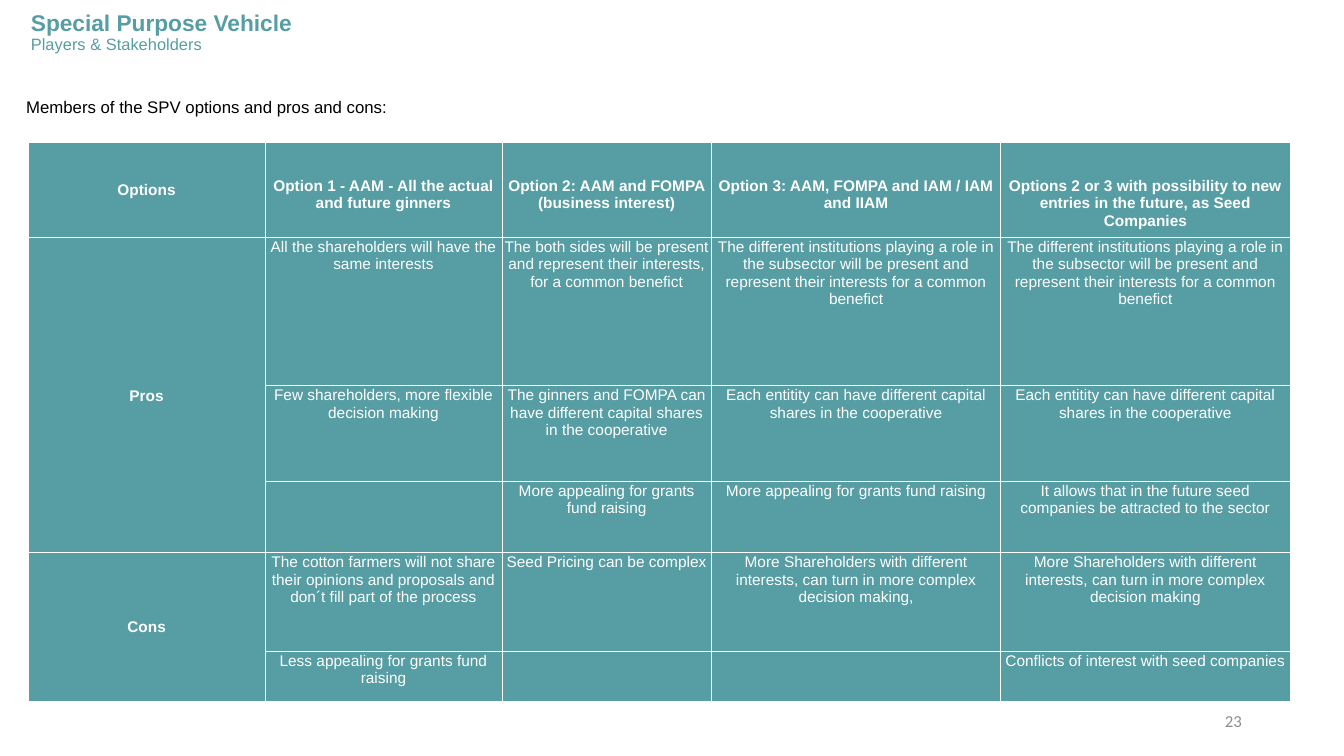
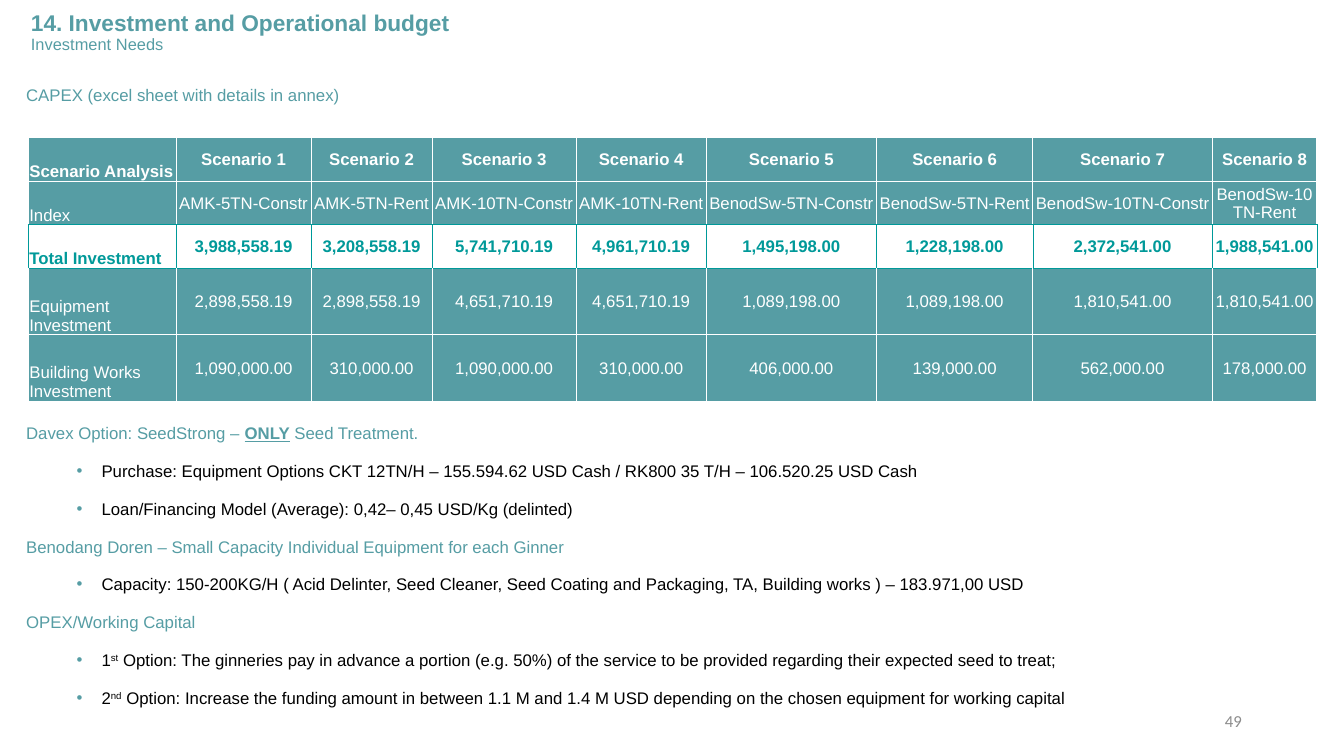
from dataclasses import dataclass

from lxml import etree
from pptx import Presentation
from pptx.dml.color import RGBColor
from pptx.enum.text import MSO_ANCHOR, PP_ALIGN
from pptx.oxml.ns import qn
from pptx.util import Cm, Pt

LEFT, CENTER, RIGHT = PP_ALIGN.LEFT, PP_ALIGN.CENTER, PP_ALIGN.RIGHT
TOP, MIDDLE, BOTTOM = MSO_ANCHOR.TOP, MSO_ANCHOR.MIDDLE, MSO_ANCHOR.BOTTOM


@dataclass(frozen=True)
class Theme:
    teal: str = "569DA4"
    accent: str = "009999"
    white: str = "FFFFFF"
    black: str = "000000"
    grey: str = "8C8C8C"
    font: str = "Arial"
    number_font: str = "Calibri"
    title: float = 16.2
    subtitle: float = 11.7
    body: float = 12
    small: float = 11


THEME = Theme()

# Content: members of the vehicle
INSTITUTIONS = ("The different institutions playing a role in the subsector will be present "
                "and represent their interests for a common benefict")
SHARES = "Each entitity can have different capital shares in the cooperative"
GRANTS = "More appealing for grants fund raising"
COMPLEX = ("More Shareholders with different interests, "
           "can turn in more complex decision making")

OPTION_ROWS = [
    ["Options", "Option 1 - AAM - All the actual and future ginners",
     "Option 2: AAM and FOMPA (business interest)",
     "Option 3: AAM, FOMPA and IAM / IAM and IIAM",
     "Options 2 or 3 with possibility to new entries in the future, as Seed Companies"],
    ["Pros", "All the shareholders will have the same interests",
     "The both sides will be present and represent their interests, for a common benefict",
     INSTITUTIONS, INSTITUTIONS],
    ["", "Few shareholders, more flexible decision making",
     "The ginners and FOMPA can have different capital shares in the cooperative",
     SHARES, SHARES],
    ["", "", GRANTS, GRANTS,
     "It allows that in the future seed companies be attracted to the sector"],
    ["Cons", "The cotton farmers will not share their opinions and proposals "
     "and don´t fill part of the process",
     "Seed Pricing can be complex", COMPLEX + ",", COMPLEX],
    ["", "Less appealing for grants fund raising", "", "",
     "Conflicts of interest with seed companies"],
]
OPTION_WIDTHS = [5.97, 5.97, 5.28, 7.29, 7.29]
OPTION_HEIGHTS = [2.41, 3.73, 2.41, 1.8, 2.49, 1.24]
OPTION_GROUPS = [(1, 3), (4, 5)]  # first and last row of each merged label

# Content: investment scenarios
SCENARIO_ROWS = [
    ["Scenario Analysis"] + [f"Scenario {number}" for number in range(1, 9)],
    ["Index"] + [f"{supplier}-{capacity}TN-{site}" for supplier in ("AMK", "BenodSw")
                 for capacity in (5, 10) for site in ("Constr", "Rent")],
    ["Total Investment", "3,988,558.19", "3,208,558.19", "5,741,710.19", "4,961,710.19",
     "1,495,198.00", "1,228,198.00", "2,372,541.00", "1,988,541.00"],
    ["Equipment Investment", "2,898,558.19", "2,898,558.19", "4,651,710.19", "4,651,710.19",
     "1,089,198.00", "1,089,198.00", "1,810,541.00", "1,810,541.00"],
    ["Building Works Investment", "1,090,000.00", "310,000.00", "1,090,000.00", "310,000.00",
     "406,000.00", "139,000.00", "562,000.00", "178,000.00"],
]
SCENARIO_WIDTHS = [3.73, 3.4, 3.05, 3.63, 3.28, 4.29, 3.94, 4.52, 2.64]
SCENARIO_HEIGHTS = [1.12, 1.09, 1.09, 1.68, 1.68]
TOTAL_ROW = 2

# Each note: is it a bullet, then its runs as (text, emphasis)
NOTES = [
    (False, [("Davex Option: SeedStrong – ", ""), ("ONLY", "strong"),
             (" Seed Treatment.", "")]),
    (True, [("Purchase: Equipment Options CKT 12TN/H – 155.594.62 USD Cash / "
             "RK800 35 T/H – 106.520.25 USD Cash", "")]),
    (True, [("Loan/Financing Model (Average): 0,42– 0,45 USD/Kg (delinted)", "")]),
    (False, [("Benodang Doren – Small Capacity Individual Equipment for each Ginner", "")]),
    (True, [("Capacity: 150-200KG/H ( Acid Delinter, Seed Cleaner, Seed Coating and "
             "Packaging, TA, Building works ) – 183.971,00 USD", "")]),
    (False, [("OPEX/Working Capital", "")]),
    (True, [("1", ""), ("st", "super"),
            (" Option: The ginneries pay in advance a portion (e.g. 50%) of the service "
             "to be provided regarding their expected seed to treat;", "")]),
    (True, [("2", ""), ("nd", "super"),
            (" Option: Increase the funding amount in between 1.1 M and 1.4 M USD "
             "depending on the chosen equipment for working capital", "")]),
]


# Text helpers
def add_span(para, text, size, color, bold=False, font=THEME.font):
    span = para.add_run()
    span.text = text
    span.font.name = font
    span.font.size = Pt(size)
    span.font.bold = bold
    span.font.color.rgb = RGBColor.from_string(color)
    return span


def add_box(page, left, top, width, height, anchor=TOP):
    box = page.shapes.add_textbox(Cm(left), Cm(top), Cm(width), Cm(height))
    box.text_frame.word_wrap = True
    box.text_frame.vertical_anchor = anchor
    return box.text_frame


def add_bullet(para):
    properties = para._p.get_or_add_pPr()
    properties.set("marL", str(Cm(1.9)))
    properties.set("indent", str(-Cm(0.63)))
    color = etree.SubElement(properties, qn("a:buClr"))
    etree.SubElement(color, qn("a:srgbClr"), val=THEME.teal)
    etree.SubElement(properties, qn("a:buFont"), typeface=THEME.font)
    etree.SubElement(properties, qn("a:buChar"), char="•")


# Shared frame of every page
def add_page(deck, title, subtitle, number):
    page = deck.slides.add_slide(deck.slide_layouts[6])
    para = add_box(page, 0.53, 0.2, 20.95, 1.25, MIDDLE).paragraphs[0]
    para.line_spacing = 0.9
    add_span(para, title, THEME.title, THEME.teal, bold=True)
    para.add_line_break()
    add_span(para, subtitle, THEME.subtitle, THEME.teal)

    para = add_box(page, 23.93, 17.65, 7.62, 1.02, MIDDLE).paragraphs[0]
    para.alignment = RIGHT
    add_span(para, number, THEME.body, THEME.grey, font=THEME.number_font)
    return page


def add_intro(page, text, color, line_spacing):
    para = add_box(page, 0.41, 2.06, 33.1, 1.2).paragraphs[0]
    para.line_spacing = line_spacing
    add_span(para, text, THEME.body, color)


# Table helpers
def add_grid(page, top, widths, heights):
    table = page.shapes.add_table(len(heights), len(widths), Cm(0.71), Cm(top),
                                  Cm(sum(widths)), Cm(sum(heights))).table
    table.first_row = table.horz_banding = False
    for column, width in zip(table.columns, widths):
        column.width = Cm(width)
    for row, height in zip(table.rows, heights):
        row.height = Cm(height)
    return table


def set_borders(cell, line, top=None, bottom=None):
    properties = cell._tc.get_or_add_tcPr()
    sides = {"L": line, "R": line, "T": top or line, "B": bottom or line}
    for side, (color, width) in sides.items():
        edge = etree.SubElement(properties, qn(f"a:ln{side}"), w=str(Pt(width)))
        fill = etree.SubElement(edge, qn("a:solidFill"))
        etree.SubElement(fill, qn("a:srgbClr"), val=color)


def fill_cell(cell, text, size, color, bold, align, anchor, margin_top=0.03):
    cell.margin_left = cell.margin_right = Cm(0.03)
    cell.margin_top, cell.margin_bottom = Cm(margin_top), 0
    cell.vertical_anchor = anchor
    para = cell.text_frame.paragraphs[0]
    para.alignment = align
    para.font.size = Pt(size)
    if text:
        add_span(para, text, size, color, bold)


def paint(cell, color):
    cell.fill.solid()
    cell.fill.fore_color.rgb = RGBColor.from_string(color)


# Pages
def build_members(deck):
    page = add_page(deck, "Special Purpose Vehicle", "Players & Stakeholders", "23")
    add_intro(page, "Members of the SPV options and pros and cons:", THEME.black, 1.5)
    table = add_grid(page, 3.58, OPTION_WIDTHS, OPTION_HEIGHTS)
    for row, texts in enumerate(OPTION_ROWS):
        for column, text in enumerate(texts):
            cell = table.cell(row, column)
            label, header = column == 0, row == 0
            set_borders(cell, (THEME.white, 0.5))
            paint(cell, THEME.teal)
            fill_cell(cell, text, THEME.small, THEME.white, label or header, CENTER,
                      MIDDLE if label else TOP,
                      0.9 if header and not label else 0.03)
    for first, last in OPTION_GROUPS:
        table.cell(first, 0).merge(table.cell(last, 0))


def build_budget(deck):
    page = add_page(deck, "14. Investment and Operational budget", "Investment Needs", "49")
    add_intro(page, "CAPEX (excel sheet with details in annex)", THEME.teal, 0.9)

    # Scenario table, with the total row outlined
    table = add_grid(page, 3.45, SCENARIO_WIDTHS, SCENARIO_HEIGHTS)
    plain, strong = (THEME.white, 1), (THEME.accent, 0.5)
    for row, texts in enumerate(SCENARIO_ROWS):
        total = row == TOTAL_ROW
        for column, text in enumerate(texts):
            cell = table.cell(row, column)
            set_borders(cell, strong if total else plain,
                        top=strong if row == TOTAL_ROW + 1 else None,
                        bottom=strong if row == TOTAL_ROW - 1 else None)
            if total:
                cell.fill.background()
            else:
                paint(cell, THEME.teal)
            fill_cell(cell, text, THEME.body, THEME.accent if total else THEME.white,
                      total or row == 0, CENTER if column else LEFT,
                      MIDDLE if column else BOTTOM)

    # Notes under the table
    frame = add_box(page, 0.41, 10.53, 33.1, 8)
    for index, (bullet, spans) in enumerate(NOTES):
        para = frame.add_paragraph() if index else frame.paragraphs[0]
        para.space_before, para.space_after = Pt(6), Pt(6.6)
        if bullet:
            add_bullet(para)
        for text, emphasis in spans:
            span = add_span(para, text, THEME.body,
                            THEME.black if bullet else THEME.teal, emphasis == "strong")
            if emphasis == "strong":
                span.font.underline = True
            elif emphasis == "super":
                span._r.get_or_add_rPr().set("baseline", "30000")


def main():
    deck = Presentation()
    deck.slide_width, deck.slide_height = Cm(33.87), Cm(19.05)
    build_members(deck)
    build_budget(deck)
    deck.save("out.pptx")


if __name__ == "__main__":
    main()
